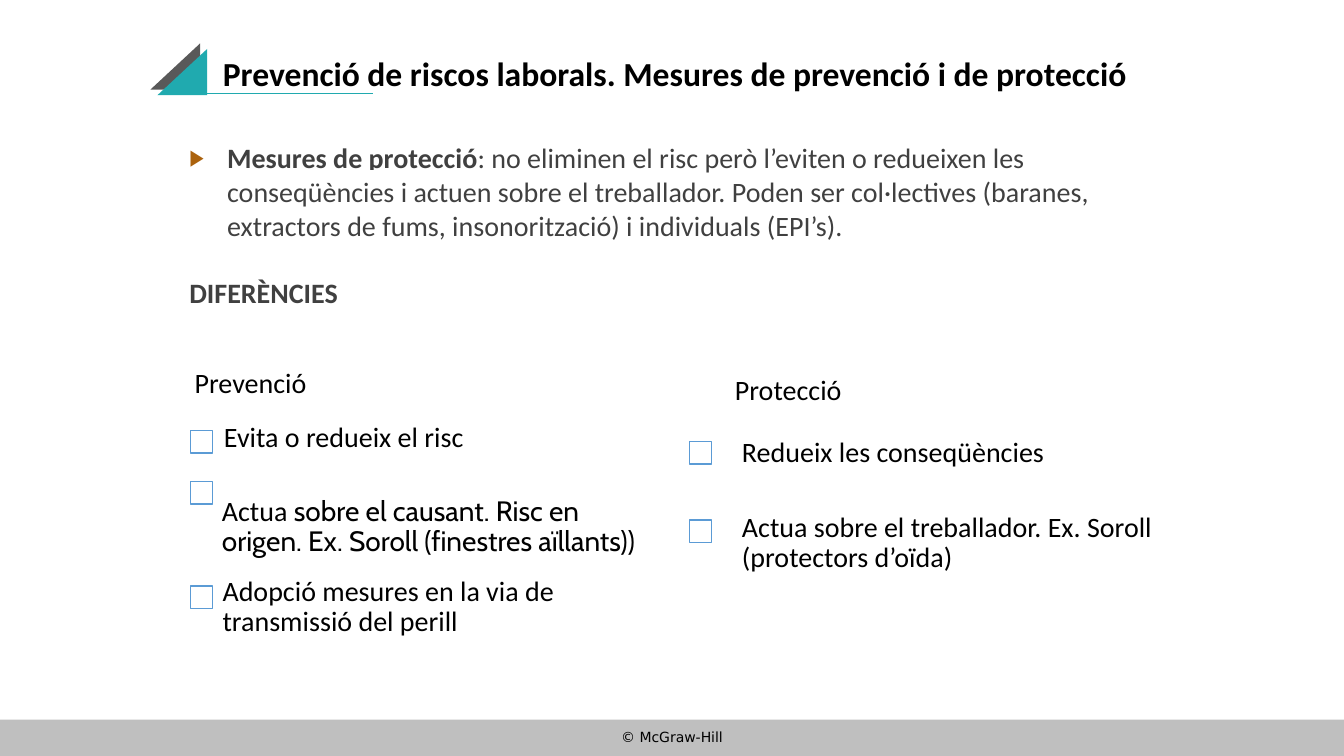
from lxml import etree
from pptx import Presentation
from pptx import util as u
from pptx.dml.color import RGBColor
from pptx.enum import shapes, text
from pptx.oxml import parse_xml
from pptx.oxml.ns import nsdecls, qn

COLORS = {
    "black": "000000", "body": "404040", "white": "FFFFFF", "bullet": "AB620D",
    "box": "5B9BD5", "teal": "20AAAF", "gray": "595959", "band": "BFBFBF",
}


def rgb(name):
    return RGBColor.from_string(COLORS[name])


def add_span(para, words, size=20, font="Calibri", color="black", bold=False, hidden_line=False):
    """Append a run; hidden_line underlines it in the page colour."""
    span = para.add_run()
    span.text = words
    if hidden_line:
        span.font.underline = True
        fill = etree.SubElement(span.font._element, qn("a:uFill"))
        fill.append(parse_xml(
            f'<a:solidFill {nsdecls("a")}><a:srgbClr val="{COLORS["white"]}"/></a:solidFill>'))
    span.font.size = u.Pt(size)
    span.font.name = font
    span.font.bold = bold
    span.font.color.rgb = rgb(color)


class Slide:
    def __init__(self, deck):
        self.page = deck.slides.add_slide(deck.slide_layouts[1])

    def place(self, index, left, top, width, height):
        """Move a template placeholder and return its text frame."""
        holder = self.page.placeholders[index]
        holder.left, holder.top = u.Pt(left), u.Pt(top)
        holder.width, holder.height = u.Pt(width), u.Pt(height)
        frame = holder.text_frame
        frame.auto_size = text.MSO_AUTO_SIZE.NONE
        frame.vertical_anchor = text.MSO_ANCHOR.TOP
        return frame

    def title(self, words, *bounds):
        para = self.place(0, *bounds).paragraphs[0]
        para.alignment = text.PP_ALIGN.LEFT
        add_span(para, words, size=24, bold=True)

    def body(self, term, definition, heading, *bounds):
        frame = self.place(1, *bounds)
        para = frame.paragraphs[0]
        para.space_before = u.Pt(0)
        props = para._p.get_or_add_pPr()
        props.set("marL", str(u.Pt(27)))
        props.set("indent", str(u.Pt(-27)))
        for tag in (f'buClr {nsdecls("a")}><a:srgbClr val="{COLORS["bullet"]}"/></a:buClr',
                    f'buSzPct {nsdecls("a")} val="80000"/',
                    f'buChar {nsdecls("a")} char="▶"/'):
            props.append(parse_xml(f"<a:{tag}>"))
        add_span(para, term, color="body", bold=True, hidden_line=True)
        add_span(para, definition, color="body")

        para = frame.add_paragraph()
        props = para._p.get_or_add_pPr()
        props.set("marL", "0")
        props.set("indent", "0")
        etree.SubElement(props, qn("a:buNone"))
        para.space_before = u.Pt(24)
        add_span(para, heading, color="body", bold=True)

    def label(self, spans, left, top, width, height, inset=(8, 8), spacing=0.9,
              anchor=text.MSO_ANCHOR.MIDDLE, align=text.PP_ALIGN.LEFT):
        """Add a text box from (words, format) pairs."""
        box = self.page.shapes.add_textbox(u.Pt(left), u.Pt(top), u.Pt(width), u.Pt(height))
        frame = box.text_frame
        frame.word_wrap = True
        frame.vertical_anchor = anchor
        frame.margin_left = frame.margin_right = u.Pt(inset[0])
        frame.margin_top = frame.margin_bottom = u.Pt(inset[1])
        para = frame.paragraphs[0]
        para.alignment = align
        para.line_spacing = spacing
        for words, style in spans:
            add_span(para, words, **style)

    def shape(self, kind, left, top, width, height, fill, line=None):
        shape = self.page.shapes.add_shape(
            kind, u.Pt(left), u.Pt(top), u.Pt(width), u.Pt(height))
        shape.shadow.inherit = False
        shape.fill.solid()
        shape.fill.fore_color.rgb = rgb(fill)
        if line:
            shape.line.color.rgb = rgb(line)
            shape.line.width = u.Pt(1)
        else:
            shape.line.fill.background()
        return shape

    def rule(self, left, right, top, color):
        line = self.page.shapes.add_connector(
            shapes.MSO_CONNECTOR.STRAIGHT, u.Pt(left), u.Pt(top), u.Pt(right), u.Pt(top))
        line.line.color.rgb = rgb(color)
        line.line.width = u.Pt(1)
        etree.SubElement(line._element.spPr, qn("a:effectLst"))


def main():
    deck = Presentation()
    deck.slide_width, deck.slide_height = u.Pt(960), u.Pt(540)
    slide = Slide(deck)
    rectangle = shapes.MSO_SHAPE.RECTANGLE

    slide.shape(rectangle, 0, 514, 960, 26, "band")
    slide.label([("© McGraw-Hill", dict(size=10, font="DejaVu Sans"))], 0, 517, 960, 23,
                inset=(7.2, 3.6), spacing=1, anchor=text.MSO_ANCHOR.TOP,
                align=text.PP_ALIGN.CENTER)

    slide.title("Prevenció de riscos laborals. Mesures de prevenció i de protecció",
                152, 34.5, 677, 56)
    slide.body("Mesures de protecció",
               ": no eliminen el risc però l’eviten o redueixen les conseqüències i actuen "
               "sobre el treballador. Poden ser col·lectives (baranes, extractors de fums, "
               "insonorització) i individuals (EPI’s).",
               "DIFERÈNCIES", 128, 97, 677, 381)

    for heading, left, top in (("Prevenció", 136, 252), ("Protecció", 522, 256.5)):
        slide.label([(heading, {})], left, top, 216, 45.5, inset=(3, 2))

    for left, tops in ((136, (307.5, 344, 418.5)), (492.5, (315.5, 371.5))):
        for top in tops:
            slide.shape(rectangle, left, top, 16, 16, "white", line="box")

    measures = (
        ([("Evita o redueix el risc", {})], 152, 295, 259, 36.5),
        ([("Actua", {}),
          (" sobre el causant. Risc en origen. Ex. Soroll (finestres aïllants))",
           dict(font="Cabin"))], 150.5, 343, 317, 67),
        ([("Adopció mesures en la via de transmissió del perill", {})], 151, 415.5, 304.5, 36.5),
        ([("Redueix les conseqüències", {})], 522, 305.5, 301.5, 36.5),
        ([("Actua sobre el treballador. Ex. Soroll (protectors d’oïda)", {})],
         522, 370, 330, 36.5),
    )
    for spans, *bounds in measures:
        slide.label(spans, *bounds)

    for left, top, color in ((107.5, 31, "gray"), (112.5, 35, "teal")):
        triangle = slide.shape(shapes.MSO_SHAPE.ISOSCELES_TRIANGLE, left, top, 35.5, 33, color)
        triangle.adjustments[0] = 1
    slide.rule(145.5, 266.5, 67, "teal")

    deck.save("out.pptx")


if __name__ == "__main__":
    main()
